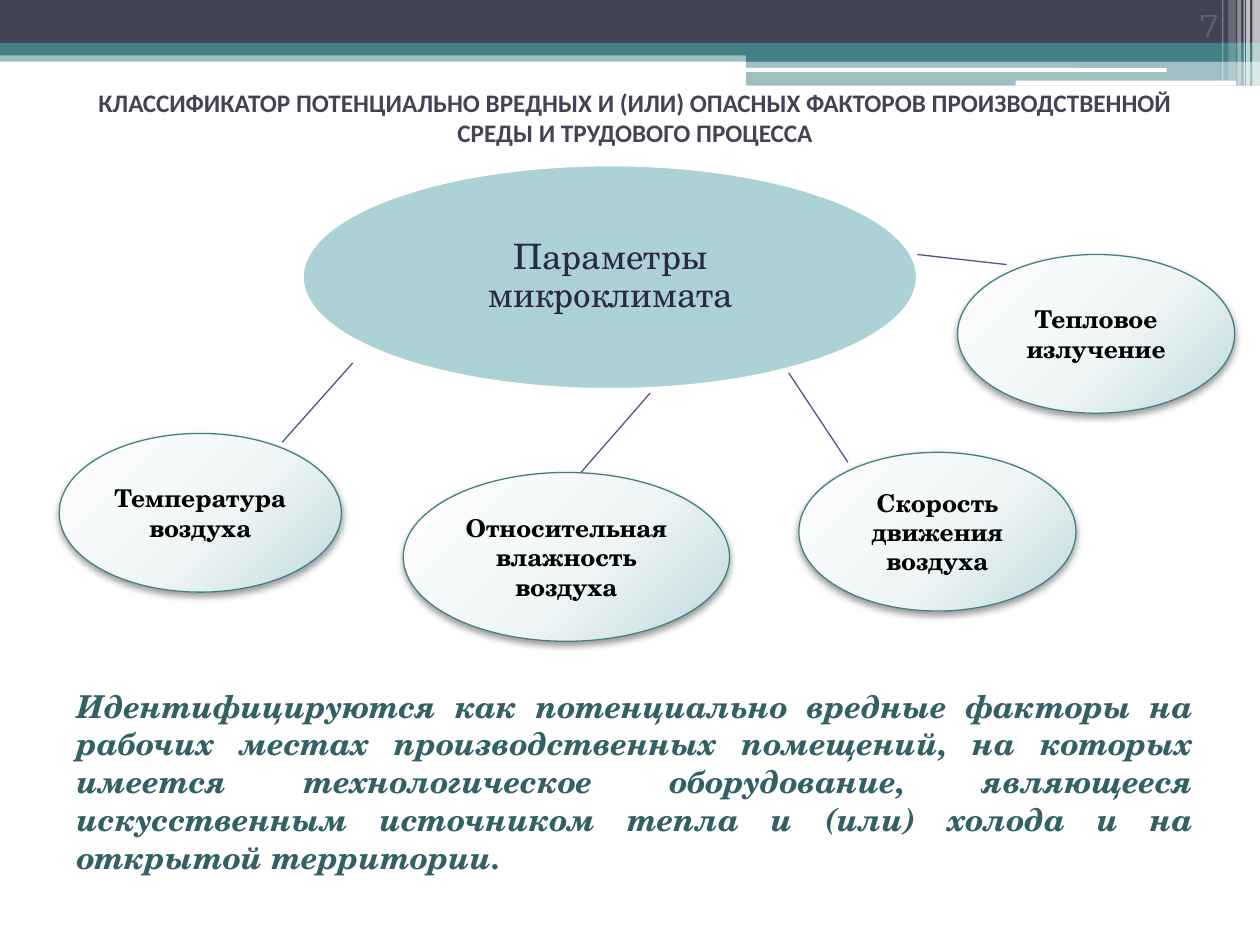
from typing import NamedTuple, Optional

from lxml import etree
from pptx import Presentation
from pptx.dml.color import RGBColor
from pptx.enum.shapes import MSO_CONNECTOR, MSO_SHAPE as Preset
from pptx.enum.text import MSO_ANCHOR as Anchor, MSO_AUTO_SIZE as AutoSize, PP_ALIGN as Align
from pptx.oxml import parse_xml
from pptx.oxml.ns import nsdecls, qn
from pptx.util import Inches, Pt

COLORS = {
    "white": "FFFFFF", "black": "000000", "navy": "424456", "teal": "438086",
    "gray": "626262", "pale_teal": "ADD2D6", "ink": "2A2A45",
    "violet": "53548A", "dark_teal": "326065",
}
SERIF = "TeX Gyre Schola"

FACTOR_GRADIENT = f"""<a:gradFill {nsdecls('a')} rotWithShape="1"><a:gsLst>
<a:gs pos="0"><a:srgbClr val="FEFEFE"/></a:gs>
<a:gs pos="55000"><a:srgbClr val="F0F6F6"/></a:gs>
<a:gs pos="100000"><a:srgbClr val="BFD9DD"/></a:gs></a:gsLst>
<a:path path="circle"><a:fillToRect l="-40000" t="-90000" r="140000" b="190000"/></a:path>
</a:gradFill>"""
FACTOR_SHADOW = f"""<a:outerShdw {nsdecls('a')} blurRad="52070" dist="25400" dir="5400000"
rotWithShape="0"><a:srgbClr val="000000"><a:alpha val="40000"/></a:srgbClr></a:outerShdw>"""


class Box(NamedTuple):
    left: float
    top: float
    width: float
    height: float

    def inches(self) -> list:
        return [Inches(value) for value in self]


class Band(NamedTuple):
    box: Box
    color: str
    opacity: int = 100
    preset: Preset = Preset.RECTANGLE


class Style(NamedTuple):
    size: float
    font: str
    color: str
    align: Align = Align.CENTER
    bold: bool = False
    italic: bool = False


class Factor(NamedTuple):
    name: str
    box: Box


class Link(NamedTuple):
    start: tuple
    end: tuple


BANDS = [
    Band(Box(0, 0.4, 10, 0.09), "teal", 50),
    Band(Box(0, 0, 10, 0.34), "navy"),
    Band(Box(0, 0.34, 10, 0.1), "teal"),
    Band(Box(5.92, 0.39, 4.08, 0.1), "teal"),
    Band(Box(5.92, 0.48, 4.08, 0.2), "teal", 50),
    Band(Box(5.91, 0.54, 3.35, 0.03), "white", preset=Preset.ROUNDED_RECTANGLE),
    Band(Box(8.06, 0.64, 1.75, 0.04), "white", preset=Preset.ROUNDED_RECTANGLE),
    Band(Box(9.94, 0, 0.06, 0.68), "white", 65),
    Band(Box(9.89, 0, 0.03, 0.68), "white", 65),
    Band(Box(9.87, 0, 0.01, 0.68), "white", 60),
    Band(Box(9.82, 0, 0.03, 0.68), "white", 40),
    Band(Box(9.75, 0, 0.06, 0.64), "white", 20),
    Band(Box(9.7, 0, 0.01, 0.64), "white", 30),
]
FACTORS = [
    Factor("Температура воздуха", Box(0.47, 3.44, 2.24, 1.26)),
    Factor("Относительная влажность воздуха", Box(3.2, 3.75, 2.59, 1.34)),
    Factor("Тепловое излучение", Box(7.6, 2.02, 2.2, 1.26)),
    Factor("Скорость движения воздуха", Box(6.34, 3.59, 2.2, 1.26)),
]
LINKS = [
    Link((2.8, 2.88), (2.24, 3.51)),
    Link((5.16, 3.12), (4.61, 3.75)),
    Link((6.26, 2.96), (6.73, 3.67)),
    Link((7.28, 2.02), (7.99, 2.1)),
]


def rgb(name: str) -> RGBColor:
    return RGBColor.from_string(COLORS[name])


def write(shape, text: str, style: Style, anchor: Anchor = Anchor.MIDDLE):
    frame = shape.text_frame
    frame.word_wrap = True
    frame.vertical_anchor = anchor
    paragraph = frame.paragraphs[0]
    paragraph.text = text
    paragraph.alignment = style.align
    font = paragraph.font
    font.size, font.name = Pt(style.size), style.font
    font.bold, font.italic = style.bold, style.italic
    font.color.rgb = rgb(style.color)
    return frame


def add_text(slide, box: Box, text: str, style: Style, anchor: Anchor = Anchor.MIDDLE):
    return write(slide.shapes.add_textbox(*box.inches()), text, style, anchor)


def add_filled(slide, preset: Preset, box: Box, fill: str, line: Optional[str] = None,
               line_width: float = 0.75):
    shape = slide.shapes.add_shape(preset, *box.inches())
    shape.shadow.inherit = False
    shape.fill.solid()
    shape.fill.fore_color.rgb = rgb(fill)
    if line:
        shape.line.color.rgb = rgb(line)
        shape.line.width = Pt(line_width)
    else:
        shape.line.fill.background()
    return shape


def add_band(slide, band: Band) -> None:
    shape = add_filled(slide, band.preset, band.box, band.color)
    if band.opacity < 100:
        color = shape.element.spPr.find(qn("a:solidFill"))[0]
        etree.SubElement(color, qn("a:alpha"), val=str(band.opacity * 1000))


def add_factor(slide, factor: Factor) -> None:
    oval = add_filled(slide, Preset.OVAL, factor.box, "white", "teal")
    properties = oval.element.spPr
    properties.replace(properties.find(qn("a:solidFill")), parse_xml(FACTOR_GRADIENT))
    properties.find(qn("a:effectLst")).append(parse_xml(FACTOR_SHADOW))
    write(oval, factor.name, Style(14, SERIF, "black", bold=True))


def add_link(slide, link: Link) -> None:
    ends = [Inches(value) for value in link.start + link.end]
    connector = slide.shapes.add_connector(MSO_CONNECTOR.STRAIGHT, *ends)
    connector.line.color.rgb = rgb("violet")
    connector.line.width = Pt(0.75)
    etree.SubElement(connector.element.spPr, qn("a:effectLst"))


def main() -> None:
    deck = Presentation()
    deck.slide_width, deck.slide_height = Inches(10), Inches(7.5)
    slide = deck.slides.add_slide(deck.slide_layouts[6])

    # Header bands, slide number and title
    for band in BANDS:
        add_band(slide, band)
    add_text(slide, Box(8.94, 0, 0.83, 0.4), "7",
             Style(18, "Montserrat", "gray", Align.RIGHT), Anchor.BOTTOM)
    add_text(slide, Box(0.55, 0.62, 8.98, 0.63),
             "КЛАССИФИКАТОР ПОТЕНЦИАЛЬНО ВРЕДНЫХ И (ИЛИ) ОПАСНЫХ ФАКТОРОВ "
             "ПРОИЗВОДСТВЕННОЙ СРЕДЫ И ТРУДОВОГО ПРОЦЕССА",
             Style(14.4, "Calibri", "navy", bold=True))

    # Central topic
    add_filled(slide, Preset.OVAL, Box(2.4, 1.31, 4.88, 1.78), "pale_teal", "white", 1.5)
    topic = add_text(slide, Box(3.12, 1.57, 3.45, 1.26), "Параметры микроклимата",
                     Style(20, SERIF, "ink"))
    topic.margin_left = topic.margin_right = Inches(0.03)
    topic.margin_top = topic.margin_bottom = Inches(0.03)
    topic.paragraphs[0].line_spacing = 0.9

    # Factors and their links to the topic
    for factor in FACTORS:
        add_factor(slide, factor)
    for link in LINKS:
        add_link(slide, link)

    # Conclusion
    conclusion = add_text(
        slide, Box(0.51, 5.4, 9.06, 1.62),
        "Идентифицируются как потенциально вредные факторы на рабочих местах "
        "производственных помещений, на которых имеется технологическое оборудование, "
        "являющееся искусственным источником тепла и (или) холода и на открытой территории.",
        Style(18, SERIF, "dark_teal", Align.JUSTIFY, bold=True, italic=True), Anchor.TOP)
    conclusion.auto_size = AutoSize.SHAPE_TO_FIT_TEXT

    deck.save("out.pptx")


if __name__ == "__main__":
    main()
